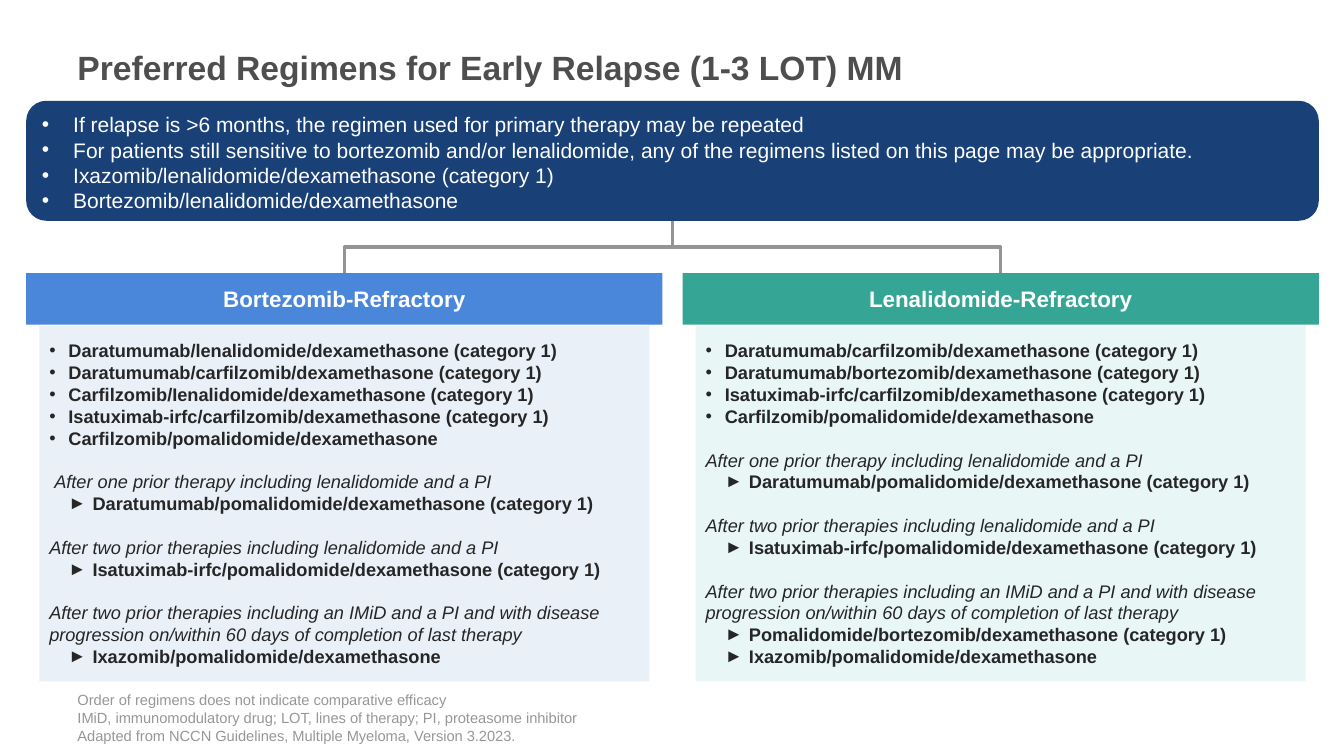
from lxml import etree
from pptx import Presentation
from pptx.dml.color import RGBColor
from pptx.enum.shapes import MSO_CONNECTOR, MSO_SHAPE
from pptx.enum.text import MSO_ANCHOR, PP_ALIGN
from pptx.oxml.ns import qn
from pptx.util import Inches, Pt

ROUND, RECT = MSO_SHAPE.ROUNDED_RECTANGLE, MSO_SHAPE.RECTANGLE
ELBOW = MSO_CONNECTOR.ELBOW
MID, LOW = MSO_ANCHOR.MIDDLE, MSO_ANCHOR.BOTTOM
LEFT, CENTER = PP_ALIGN.LEFT, PP_ALIGN.CENTER

TITLE = "Preferred Regimens for Early Relapse (1-3 LOT) MM"
RULES = [
    "If relapse is >6 months, the regimen used for primary therapy may be repeated",
    "For patients still sensitive to bortezomib and/or lenalidomide, any of the regimens listed on this page may be appropriate.",
    "Ixazomib/lenalidomide/dexamethasone (category 1)",
    "Bortezomib/lenalidomide/dexamethasone",
]
NOTES = [
    "Order of regimens does not indicate comparative efficacy",
    "IMiD, immunomodulatory drug; LOT, lines of therapy; PI, proteasome inhibitor",
    "Adapted from NCCN Guidelines, Multiple Myeloma, Version 3.2023.",
]
ONE = "After one prior therapy including lenalidomide and a PI"
TWO = "After two prior therapies including lenalidomide and a PI"
LAST = "After two prior therapies including an IMiD and a PI and with disease progression on/within 60 days of completion of last therapy"
DARA = "Daratumumab/pomalidomide/dexamethasone (category 1)"
ISA = "Isatuximab-irfc/pomalidomide/dexamethasone (category 1)"
IXA = "Ixazomib/pomalidomide/dexamethasone"
ARMS = [
    {
        "head": "Bortezomib-Refractory", "dark": "4A86D9", "pale": "EAF0F7",
        "turn": 90,
        "drugs": [
            "Daratumumab/lenalidomide/dexamethasone (category 1)",
            "Daratumumab/carfilzomib/dexamethasone (category 1)",
            "Carfilzomib/Ienalidomide/dexamethasone (category 1)",
            "Isatuximab-irfc/carfilzomib/dexamethasone (category 1)",
            "Carfilzomib/pomalidomide/dexamethasone",
        ],
        "steps": [(ONE, 0.05, [DARA]), (TWO, 0, [ISA]), (LAST, 0, [IXA])],
    },
    {
        "head": "Lenalidomide-Refractory", "dark": "35A696", "pale": "E8F6F5",
        "turn": 270,
        "drugs": [
            "Daratumumab/carfilzomib/dexamethasone (category 1)",
            "Daratumumab/bortezomib/dexamethasone (category 1)",
            "Isatuximab-irfc/carfilzomib/dexamethasone (category 1)",
            "Carfilzomib/pomalidomide/dexamethasone",
        ],
        "steps": [
            (ONE, 0, [DARA]), (TWO, 0, [ISA]),
            (LAST, 0, ["Pomalidomide/bortezomib/dexamethasone (category 1)", IXA]),
        ],
    },
]
EDGE, PITCH, WIDE, INSET = 0.26, 6.51, 6.31, 0.13
HEAD_Y, BODY_Y, STEM_Y = 2.71, 3.23, 2.19
HUB = 6.67

deck = Presentation()
deck.slide_width, deck.slide_height = Inches(13.33), Inches(7.5)
slide = deck.slides.add_slide(deck.slide_layouts[6])


def color(code):
    return RGBColor.from_string(code)


def box(kind, at, fill, anchor=MID):
    spot = [Inches(n) for n in at]
    if fill:
        item = slide.shapes.add_shape(kind, *spot)
        item.shadow.inherit = False
        item.fill.solid()
        item.fill.fore_color.rgb = color(fill)
        item.line.fill.background()
    else:
        item = slide.shapes.add_textbox(*spot)
    frame = item.text_frame
    frame.word_wrap = True
    frame.vertical_anchor = anchor
    return frame


def write(frame, text, size, tint, bold=False, slant=False,
          align=LEFT, hang=0, mark="", indent=0, gap=0):
    first = frame.paragraphs[0]
    para = frame.add_paragraph() if first.runs else first
    para.alignment = align
    props = para._p.get_or_add_pPr()
    props.set("marL", str(Inches(indent + hang)))
    props.set("indent", str(-Inches(hang)))
    if gap:
        para.space_before = Pt(gap)
    if mark:
        font = etree.SubElement(props, qn("a:buFont"))
        font.set("typeface", "Arial")
        etree.SubElement(props, qn("a:buChar")).set("char", mark)
    run = para.add_run()
    run.text = text
    font = run.font
    font.name, font.size = "Arial", Pt(size)
    font.bold, font.italic = bold, slant
    font.color.rgb = color(tint)


def link(x1, y1, x2, y2, turn):
    mid_x, mid_y = (x1 + x2) / 2, (y1 + y2) / 2
    half_x = (y2 - y1) / 2 * (1 if turn == 90 else -1)
    half_y = abs(x2 - x1) / 2
    ends = (mid_x - half_x, mid_y - half_y, mid_x + half_x, mid_y + half_y)
    line = slide.shapes.add_connector(ELBOW, *[Inches(n) for n in ends])
    line.line.color.rgb = color("949494")
    line.line.width = Pt(2.25)
    props = line._element.spPr
    props.find(qn("a:xfrm")).set("rot", str(turn * 60000))
    etree.SubElement(props, qn("a:effectLst"))


write(box(RECT, (0.67, 0.38, 11.75, 0.57), None), TITLE, 24, "4D4E4D", bold=True)

notes = box(RECT, (0.67, 6.95, 11.75, 0.48), None, LOW)
for text in NOTES:
    write(notes, text, 10.5, "979797")

rules = box(ROUND, (EDGE, 1, 12.82, 1.19), "194178")
rules.margin_top = Inches(0.08)
for text in RULES:
    write(rules, text, 15, "FFFFFF", hang=0.31, mark="•")

for n, arm in enumerate(ARMS):
    x = EDGE + n * PITCH
    link(HUB, STEM_Y, x + WIDE / 2, HEAD_Y, arm["turn"])
    head = box(RECT, (x, HEAD_Y, WIDE, 0.51), arm["dark"])
    write(head, arm["head"], 16, "FFFFFF", bold=True, align=CENTER)
    body = box(RECT, (x + INSET, BODY_Y, WIDE - 2 * INSET, 3.53), arm["pale"])
    for drug in arm["drugs"]:
        write(body, drug, 13, "262626", bold=True, hang=0.19, mark="•")
    for text, shift, picks in arm["steps"]:
        write(body, text, 13, "262626", slant=True, indent=shift, gap=15.6)
        for pick in picks:
            write(body, pick, 13, "262626", bold=True, hang=0.24, mark="►", indent=0.19)

deck.save("out.pptx")
